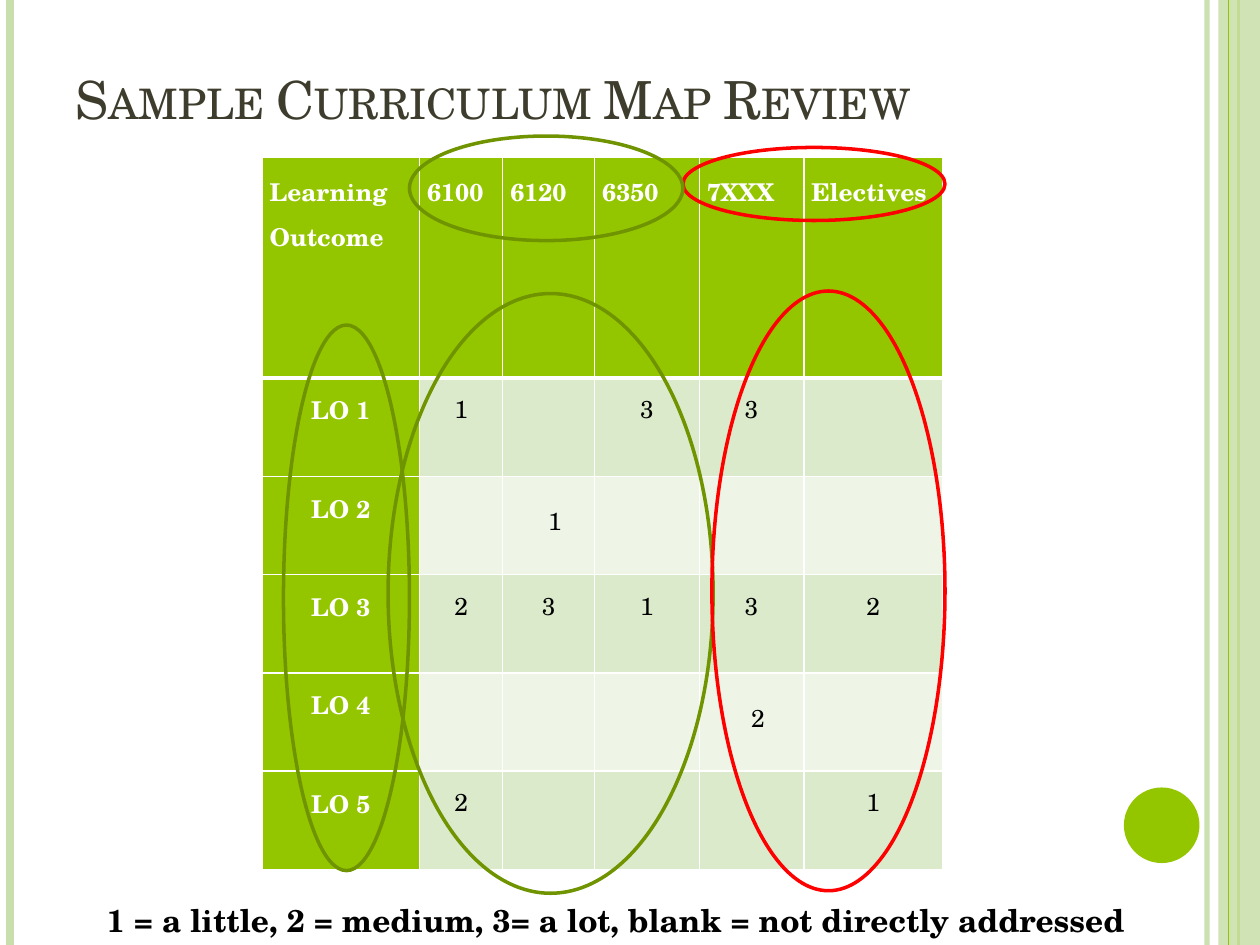
from lxml import etree
from pptx import Presentation
from pptx.dml.color import RGBColor
from pptx.enum.shapes import MSO_CONNECTOR, MSO_SHAPE
from pptx.enum.text import MSO_ANCHOR, PP_ALIGN
from pptx.oxml.ns import qn
from pptx.util import Inches, Pt

STRAIGHT = MSO_CONNECTOR.STRAIGHT
RECTANGLE, ELLIPSE = MSO_SHAPE.RECTANGLE, MSO_SHAPE.OVAL
BOTTOM = MSO_ANCHOR.BOTTOM
LEFT, CENTER = PP_ALIGN.LEFT, PP_ALIGN.CENTER
TITLE_ONLY = 5

COLORS = {
    "green": "94C600", "pale": "C8DFAB", "olive": "6F9400", "red": "FF0000",
    "band": "DCEACC", "light": "EEF5E7", "title": "3E3D2D",
    "white": "FFFFFF", "black": "000000",
}
HEADERS = ["Learning Outcome", "6100", "6120", "6350", "7XXX", "Electives"]
RATINGS = [
    ["LO 1", "1", "", "3", "3", ""],
    ["LO 2", "", "1", "", "", ""],
    ["LO 3", "2", "3", "1", "3", "2"],
    ["LO 4", "", "", "", "2", ""],
    ["LO 5", "2", "", "", "", "1"],
]
COLUMN_WIDTHS = [1.25, 0.66, 0.73, 0.83, 0.83, 1.1]
ROW_HEIGHTS = [1.75] + [0.78] * len(RATINGS)
LOWERED_CELLS = {(2, 2), (4, 4)}
RULES = [(9.58, "pale", 3, 93), (0.08, "pale", 4.5, 100), (9.83, "green", 1.5, 100)]
RINGS = [
    (2.25, 2.58, 1, 4.33, "olive"),
    (5.42, 1.17, 2.08, 0.58, "red"),
    (3.08, 2.33, 2.58, 4.76, "olive"),
    (5.65, 2.31, 1.85, 4.76, "red"),
    (3.25, 1.08, 2.17, 0.83, "olive"),
]


def rgb(name):
    return RGBColor.from_string(COLORS[name])


def set_alpha(element, percent):
    if percent < 100:
        color = next(element.iter(qn("a:srgbClr")))
        etree.SubElement(color, qn("a:alpha"), val=str(percent * 1000))


def write_text(frame, text, size=14, color="black", bold=False, align=LEFT,
               spacing=None, before=None, small_caps=False, font="TeX Gyre Schola"):
    para = frame.paragraphs[0]
    para.alignment = align
    if spacing:
        para.line_spacing = spacing
    if before:
        para.space_before = Pt(before)
    span = para.add_run()
    span.text = text
    span.font.name = font
    span.font.size = Pt(size)
    span.font.bold = bold
    span.font.color.rgb = rgb(color)
    if small_caps:
        span._r.get_or_add_rPr().set("cap", "small")


class Page:
    def __init__(self, deck):
        self.slide = deck.slides.add_slide(deck.slide_layouts[TITLE_ONLY])
        self.shapes = self.slide.shapes
        self.height = deck.slide_height
        self.cell_margin = 0.06
        self.ring_width = 2

    def title(self, text, left, top, width, height):
        box = self.shapes.title
        box.left, box.top = Inches(left), Inches(top)
        box.width, box.height = Inches(width), Inches(height)
        box.text_frame.vertical_anchor = BOTTOM
        write_text(box.text_frame, text, size=30, color="title", small_caps=True)

    def rule(self, x, color, width, alpha=100):
        line = self.shapes.add_connector(STRAIGHT, Inches(x), 0, Inches(x), self.height)
        line.line.color.rgb = rgb(color)
        line.line.width = Pt(width)
        properties = line._element.spPr
        set_alpha(properties, alpha)
        etree.SubElement(properties, qn("a:effectLst"))

    def shape(self, kind, left, top, width, height, fill=None, outline=None, alpha=100):
        shape = self.shapes.add_shape(
            kind, Inches(left), Inches(top), Inches(width), Inches(height))
        shape.shadow.inherit = False
        if fill:
            shape.fill.solid()
            shape.fill.fore_color.rgb = rgb(fill)
            set_alpha(shape._element.spPr, alpha)
        else:
            shape.fill.background()
        if outline:
            shape.line.color.rgb = rgb(outline)
            shape.line.width = Pt(self.ring_width)
        else:
            shape.line.fill.background()

    def text(self, text, left, top, width, height, **style):
        box = self.shapes.add_textbox(
            Inches(left), Inches(top), Inches(width), Inches(height))
        box.text_frame.word_wrap = False
        write_text(box.text_frame, text, **style)

    def borders(self, cell, top, bottom):
        properties = cell._tc.get_or_add_tcPr()
        for side, width in (("L", 1), ("R", 1), ("T", top), ("B", bottom)):
            line = etree.SubElement(properties, qn(f"a:ln{side}"), w=str(Pt(width)))
            fill = etree.SubElement(line, qn("a:solidFill"))
            etree.SubElement(fill, qn("a:srgbClr"), val=COLORS["white"])

    def cell(self, cell, text, row, column):
        heading = row == 0 or column == 0
        lowered = (row, column) in LOWERED_CELLS
        self.borders(cell, 3 if row == 1 else 1, 3 if row == 0 else 1)
        cell.margin_left = Inches(self.cell_margin + 0.1 * lowered)
        cell.margin_top = Inches(self.cell_margin + 0.11 * lowered)
        cell.margin_right = cell.margin_bottom = Inches(self.cell_margin)
        cell.fill.solid()
        cell.fill.fore_color.rgb = rgb(
            "green" if heading else "band" if row % 2 else "light")
        if text:
            write_text(cell.text_frame, text, bold=heading,
                       color="white" if heading else "black",
                       align=CENTER if row else LEFT,
                       spacing=1.15 if row else 1.2, before=0 if row else 10)

    def table(self, rows, left, top):
        frame = self.shapes.add_table(
            len(rows), len(COLUMN_WIDTHS), Inches(left), Inches(top),
            Inches(sum(COLUMN_WIDTHS)), Inches(sum(ROW_HEIGHTS)))
        table = frame.table
        for column, width in zip(table.columns, COLUMN_WIDTHS):
            column.width = Inches(width)
        for row, height in zip(table.rows, ROW_HEIGHTS):
            row.height = Inches(height)
        for row, values in enumerate(rows):
            for column, text in enumerate(values):
                self.cell(table.cell(row, column), text, row, column)


def main():
    deck = Presentation()
    deck.slide_width, deck.slide_height = Inches(10), Inches(7.5)
    page = Page(deck)
    for rule in RULES:
        page.rule(*rule)
    page.shape(RECTANGLE, 9.67, 0, 0.33, 7.5, fill="pale", alpha=87)
    page.rule(9.75, "green", 0.75)
    page.shape(ELLIPSE, 8.92, 6.25, 0.6, 0.6, fill="green")
    page.title("Sample Curriculum Map Review", 0.5, 0.3, 8.17, 0.78)
    page.table([HEADERS] + RATINGS, 2.08, 1.25)
    page.text("1 = a little, 2 = medium, 3= a lot, blank = not directly addressed",
              0.75, 7.1, 8.37, 0.4, size=18, bold=True)
    for left, top, width, height, color in RINGS:
        page.shape(ELLIPSE, left, top, width, height, outline=color)
    deck.save("out.pptx")


if __name__ == "__main__":
    main()
